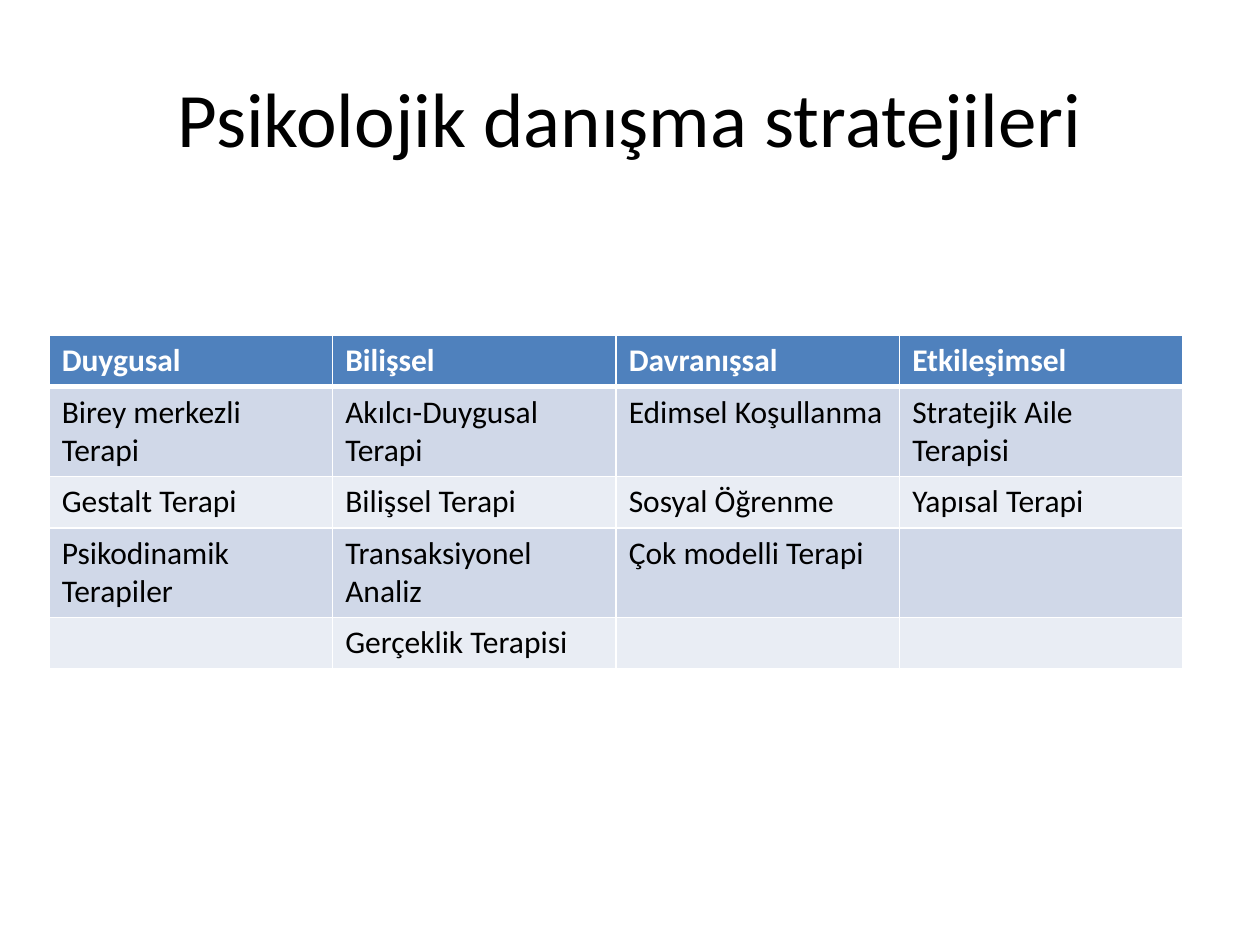
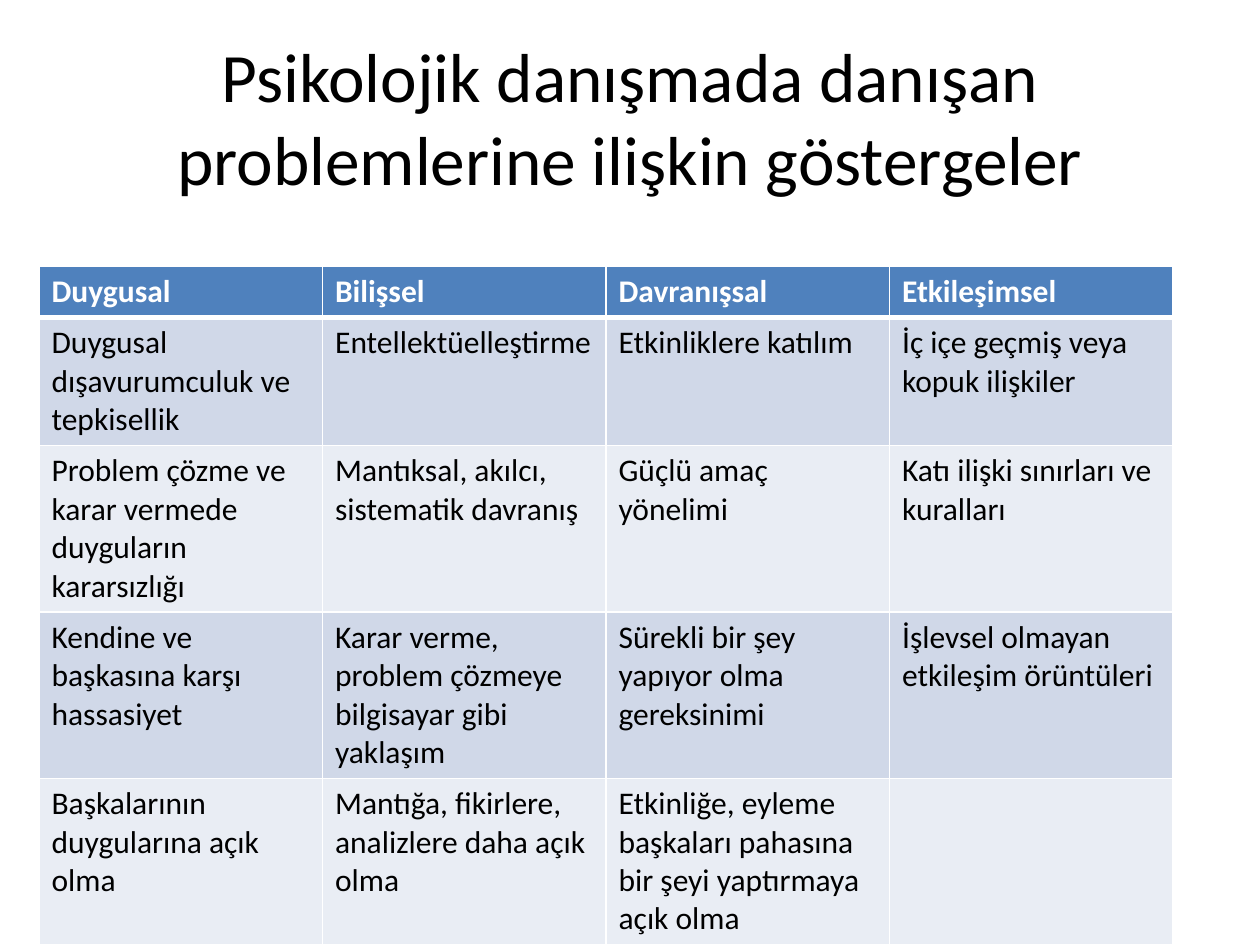
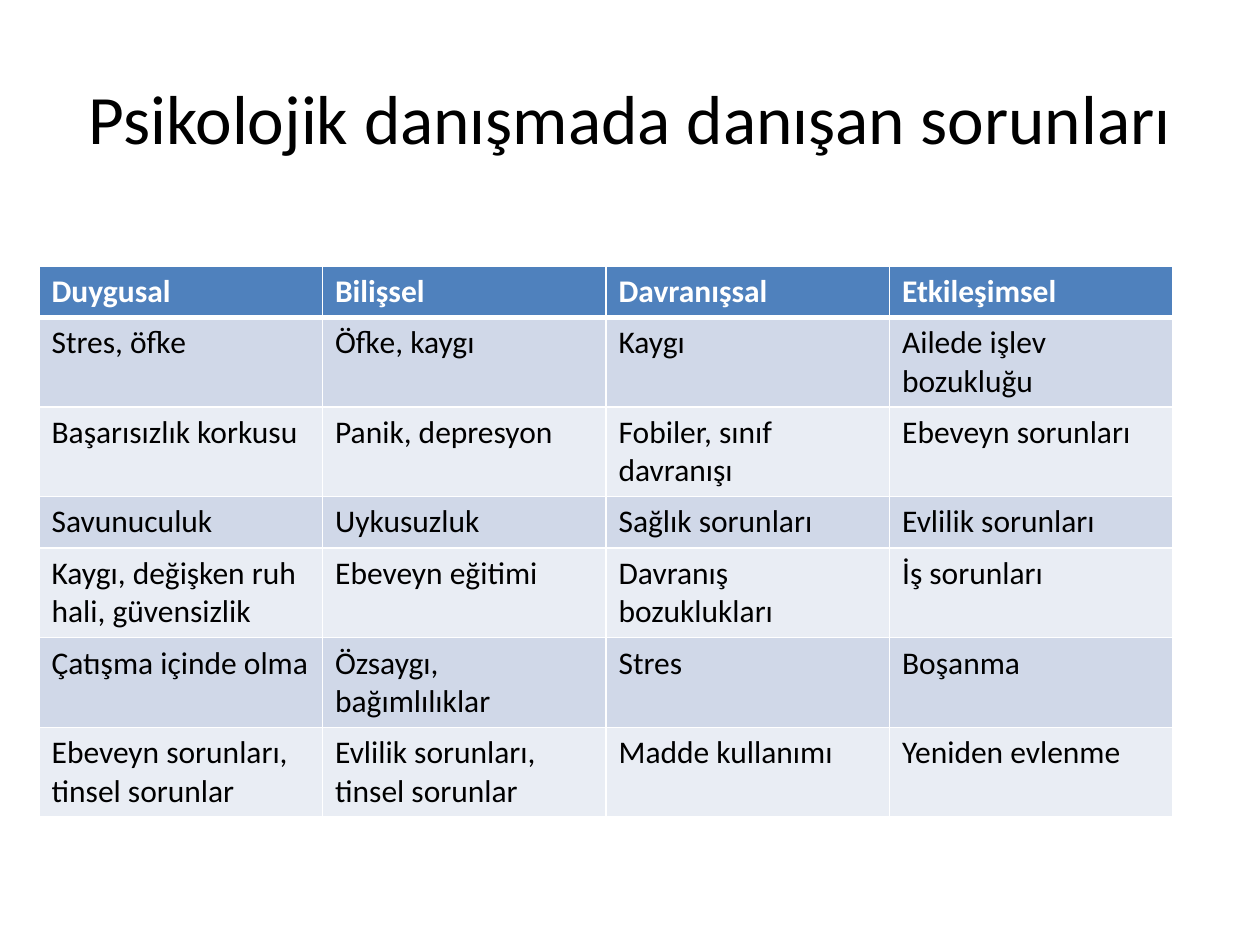
from lxml.etree import SubElement
from pptx import Presentation
from pptx.dml.color import RGBColor
from pptx.enum.text import MSO_ANCHOR, MSO_AUTO_SIZE, PP_ALIGN
from pptx.oxml.ns import qn
from pptx.util import Inches, Pt

# Shared style
COLORS = {
    "text": "000000",
    "header_text": "FFFFFF",
    "header_fill": "4F81BD",
    "odd_row": "D0D8E8",
    "even_row": "E9EDF4",
    "border": "FFFFFF",
}
FONT = "Calibri"
TITLE_ONLY_LAYOUT = 5
COLUMN_WIDTH = 2.25
ROW_HEIGHT = 0.41
HEADINGS = ["Duygusal", "Bilişsel", "Davranışsal", "Etkileşimsel"]

# Slide content
STRATEGIES = [
    ["Birey merkezli Terapi", "Akılcı-Duygusal Terapi", "Edimsel Koşullanma",
     "Stratejik Aile Terapisi"],
    ["Gestalt Terapi", "Bilişsel Terapi", "Sosyal Öğrenme", "Yapısal Terapi"],
    ["Psikodinamik Terapiler", "Transaksiyonel Analiz", "Çok modelli Terapi", ""],
    ["", "Gerçeklik Terapisi", "", ""],
]
INDICATORS = [
    ["Duygusal dışavurumculuk ve tepkisellik", "Entellektüelleştirme",
     "Etkinliklere katılım", "İç içe geçmiş veya kopuk ilişkiler"],
    ["Problem çözme ve karar vermede duyguların kararsızlığı",
     "Mantıksal, akılcı, sistematik davranış", "Güçlü amaç yönelimi",
     "Katı ilişki sınırları ve kuralları"],
    ["Kendine ve başkasına karşı hassasiyet",
     "Karar verme, problem çözmeye bilgisayar gibi yaklaşım",
     "Sürekli bir şey yapıyor olma gereksinimi",
     "İşlevsel olmayan etkileşim örüntüleri"],
    ["Başkalarının duygularına açık olma",
     "Mantığa, fikirlere, analizlere daha açık olma",
     "Etkinliğe, eyleme başkaları pahasına bir şeyi yaptırmaya açık olma", ""],
]
PROBLEMS = [
    ["Stres, öfke", "Öfke, kaygı", "Kaygı", "Ailede işlev bozukluğu"],
    ["Başarısızlık korkusu", "Panik, depresyon", "Fobiler, sınıf davranışı",
     "Ebeveyn sorunları"],
    ["Savunuculuk", "Uykusuzluk", "Sağlık sorunları", "Evlilik sorunları"],
    ["Kaygı, değişken ruh hali, güvensizlik", "Ebeveyn eğitimi",
     "Davranış bozuklukları", "İş sorunları"],
    ["Çatışma içinde olma", "Özsaygı, bağımlılıklar", "Stres", "Boşanma"],
    ["Ebeveyn sorunları, tinsel sorunlar", "Evlilik sorunları, tinsel sorunlar",
     "Madde kullanımı", "Yeniden evlenme"],
]


class DeckBuilder:
    """Holds the presentation style and the slide being built."""

    def __init__(self):
        self.presentation = Presentation()
        self.presentation.slide_width = Inches(10)
        self.presentation.slide_height = Inches(7.5)
        self.slide = None

    def add_slide(self):
        layout = self.presentation.slide_layouts[TITLE_ONLY_LAYOUT]
        self.slide = self.presentation.slides.add_slide(layout)

    def format_font(self, font, size, color, bold=False):
        font.name = FONT
        font.size = Pt(size)
        font.bold = bold
        font.color.rgb = RGBColor.from_string(COLORS[color])

    def add_title(self, text, size):
        title = self.slide.shapes.title
        title.left, title.top = Inches(0.5), Inches(0.3)
        title.width, title.height = Inches(9), Inches(1.25)
        text_frame = title.text_frame
        text_frame.text = text
        text_frame.auto_size = MSO_AUTO_SIZE.NONE
        text_frame.vertical_anchor = MSO_ANCHOR.MIDDLE
        paragraph = text_frame.paragraphs[0]
        paragraph.alignment = PP_ALIGN.CENTER
        self.format_font(paragraph.runs[0].font, size, "text")

    def add_borders(self, cell, row_index):
        # A thick rule separates the header from the body
        widths = {
            "lnL": 1,
            "lnR": 1,
            "lnT": 3 if row_index == 1 else 1,
            "lnB": 3 if row_index == 0 else 1,
        }
        properties = cell._tc.get_or_add_tcPr()
        for side, width in widths.items():
            line = SubElement(properties, qn(f"a:{side}"), w=str(Pt(width)))
            fill = SubElement(line, qn("a:solidFill"))
            SubElement(fill, qn("a:srgbClr"), val=COLORS["border"])

    def fill_cell(self, cell, text, row_index):
        is_header = row_index == 0
        # Borders must come before the fill in the cell properties
        self.add_borders(cell, row_index)
        band = "header_fill" if is_header else "odd_row" if row_index % 2 else "even_row"
        cell.fill.solid()
        cell.fill.fore_color.rgb = RGBColor.from_string(COLORS[band])
        cell.text_frame.text = text
        color = "header_text" if is_header else "text"
        for run in cell.text_frame.paragraphs[0].runs:
            self.format_font(run.font, 18, color, bold=is_header)

    def add_table(self, left, top, body_rows):
        rows = [HEADINGS] + body_rows
        table = self.slide.shapes.add_table(
            len(rows), len(HEADINGS), Inches(left), Inches(top),
            Inches(COLUMN_WIDTH * len(HEADINGS)), Inches(ROW_HEIGHT * len(rows)),
        ).table
        for column in table.columns:
            column.width = Inches(COLUMN_WIDTH)
        for row_index, texts in enumerate(rows):
            table.rows[row_index].height = Inches(ROW_HEIGHT)
            for column_index, text in enumerate(texts):
                self.fill_cell(table.cell(row_index, column_index), text, row_index)


def main():
    slides = [
        ("Psikolojik danışma stratejileri", 44, 0.39, 2.66, STRATEGIES),
        ("Psikolojik danışmada danışan problemlerine ilişkin göstergeler",
         39.6, 0.31, 2.11, INDICATORS),
        ("Psikolojik danışmada danışan sorunları", 39.6, 0.31, 2.11, PROBLEMS),
    ]
    deck = DeckBuilder()
    for title, title_size, table_left, table_top, body_rows in slides:
        deck.add_slide()
        deck.add_title(title, title_size)
        deck.add_table(table_left, table_top, body_rows)
    deck.presentation.save("out.pptx")


if __name__ == "__main__":
    main()
